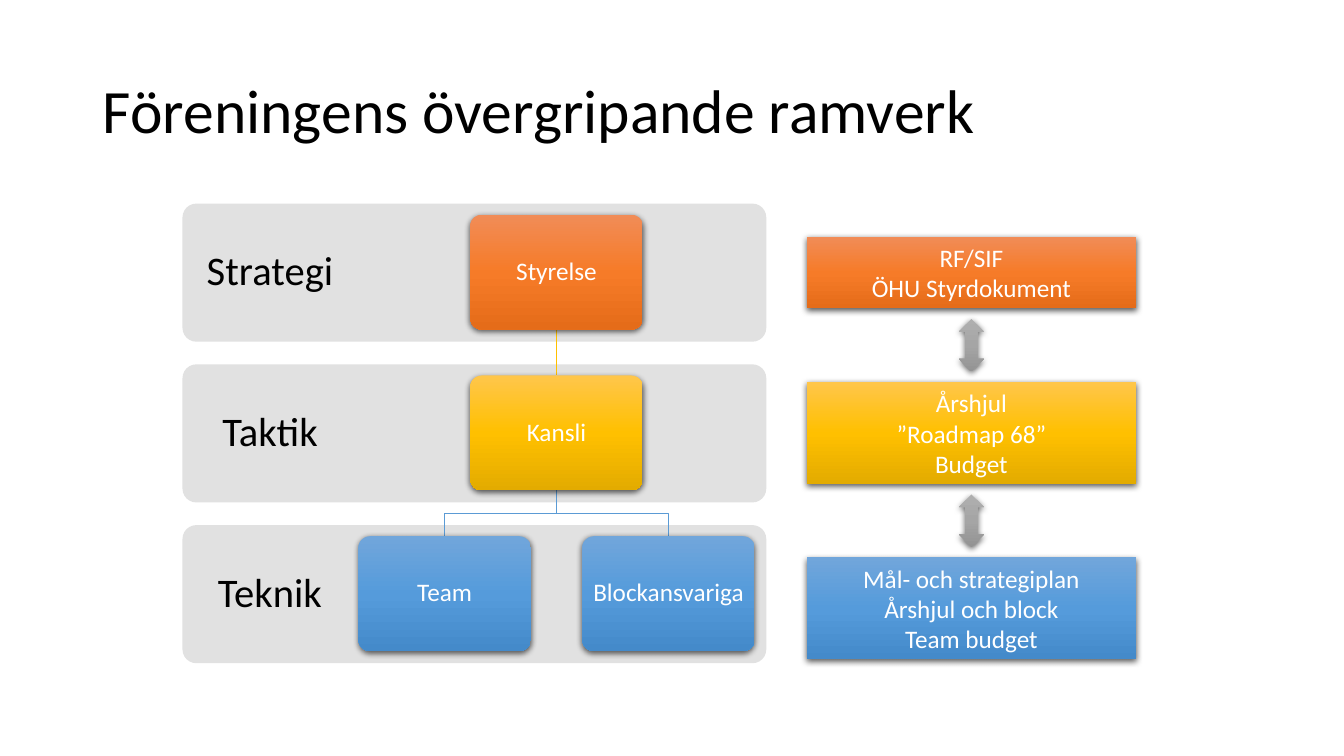
from dataclasses import dataclass
from lxml import etree
from pptx import Presentation
from pptx import util as u
from pptx.dml.color import RGBColor
from pptx.enum import shapes, text
from pptx.oxml import ns


@dataclass(frozen=True)
class Theme:
    font: str = "Calibri"
    title_size: int = 44
    label_size: int = 29
    body_size: int = 18
    ink: str = "000000"
    white: str = "FFFFFF"
    band: str = "E1E1E1"
    yellow_line: str = "FFC000"
    blue_line: str = "5B9BD5"
    orange: tuple = ("F18C57", "F67B28", "E56C19")
    yellow: tuple = ("FFC64B", "FFC000", "E3AB00")
    blue: tuple = ("71A6DB", "559BDB", "448ACA")
    grey: tuple = ("AFAFAF", "A5A5A5", "939393")


THEME = Theme()
SHAPE = shapes.MSO_SHAPE


@dataclass(frozen=True)
class Box:
    left: float
    top: float
    width: float
    height: float

    @property
    def center(self):
        return self.left + self.width / 2

    @property
    def bottom(self):
        return self.top + self.height

    def lengths(self):
        return [u.Inches(n) for n in (self.left, self.top, self.width, self.height)]


def add_element(parent, tag, **attributes):
    return etree.SubElement(parent, ns.qn(tag), attributes)


def write(shape, lines, size, color, align=text.PP_ALIGN.CENTER, spacing=1.0, inset=None):
    frame = shape.text_frame
    frame.text = "\n".join(lines)
    frame.word_wrap = True
    frame.auto_size = text.MSO_AUTO_SIZE.NONE
    frame.vertical_anchor = text.MSO_ANCHOR.MIDDLE
    if inset is not None:
        frame.margin_left = frame.margin_right = u.Inches(inset)
        frame.margin_top = frame.margin_bottom = u.Inches(inset)
    for para in frame.paragraphs:
        para.alignment = align
        para.line_spacing = spacing
        for span in para.runs:
            span.font.name = THEME.font
            span.font.size = u.Pt(size)
            span.font.color.rgb = RGBColor.from_string(color)


def add_raised(page, kind, box, stops):
    shape = page.shapes.add_shape(kind, *box.lengths())
    shape.line.fill.background()
    shape.fill.gradient()
    shape.fill.gradient_angle = 270
    stop_list = shape._element.spPr.find(".//" + ns.qn("a:gsLst"))
    for stop in list(stop_list):
        stop_list.remove(stop)
    for position, color in zip((0, 50000, 100000), stops):
        stop = add_element(stop_list, "a:gs", pos=str(position))
        add_element(stop, "a:srgbClr", val=color)
    shape.shadow.inherit = False
    effects = shape._element.spPr.find(ns.qn("a:effectLst"))
    shadow = add_element(effects, "a:outerShdw", blurRad="57150", dist="19050",
                         dir="5400000", algn="ctr", rotWithShape="0")
    shade = add_element(shadow, "a:srgbClr", val=THEME.ink)
    add_element(shade, "a:alpha", val="63000")
    return shape


def add_title(page, box):
    title = page.shapes.title
    title.left, title.top, title.width, title.height = box.lengths()
    write(title, ["Föreningens övergripande ramverk"], THEME.title_size, THEME.ink,
          text.PP_ALIGN.LEFT, 0.9)


def add_band(page, box, label):
    band = page.shapes.add_shape(SHAPE.ROUNDED_RECTANGLE, *box.lengths())
    band.adjustments[0] = 0.1
    band.fill.solid()
    band.fill.fore_color.rgb = RGBColor.from_string(THEME.band)
    band.line.fill.background()
    band.shadow.inherit = False
    label_box = Box(box.left, box.top, box.width * 0.3, box.height)
    caption = page.shapes.add_textbox(*label_box.lengths())
    write(caption, [label], THEME.label_size, THEME.ink, spacing=0.9, inset=0.23)


def add_node(page, box, label, stops):
    node = add_raised(page, SHAPE.ROUNDED_RECTANGLE, box, stops)
    node.adjustments[0] = 0.1
    write(node, [label], THEME.body_size, THEME.white, spacing=0.9, inset=0.05)


def style_line(line, color):
    line.color.rgb = RGBColor.from_string(color)
    line.width = u.Pt(1)


def add_straight_link(page, parent, child):
    link = page.shapes.add_connector(
        shapes.MSO_CONNECTOR.STRAIGHT, u.Inches(parent.center), u.Inches(parent.bottom),
        u.Inches(child.center), u.Inches(child.top))
    style_line(link.line, THEME.yellow_line)
    add_element(link._element.spPr, "a:effectLst")


def add_branch(page, parent, child):
    middle = (parent.bottom + child.top) / 2
    points = [(parent.center, middle), (child.center, middle), (child.center, child.top)]
    builder = page.shapes.build_freeform(u.Inches(parent.center), u.Inches(parent.bottom))
    builder.add_line_segments([(u.Inches(x), u.Inches(y)) for x, y in points], close=False)
    branch = builder.convert_to_shape()
    branch.fill.background()
    style_line(branch.line, THEME.blue_line)
    branch.shadow.inherit = False


def add_hierarchy(page, box):
    band_height, pitch = 1.37, 1.595
    node_width, node_height, node_pad = 1.71, 1.14, 0.11
    trunk, spread = box.left + 3.71, 1.11
    tops = [box.top + pitch * level for level in range(3)]
    for top, label in zip(tops, ("Strategi", "Taktik", "Teknik")):
        add_band(page, Box(box.left, top, box.width, band_height), label)

    def node_box(level, shift):
        return Box(trunk + shift - node_width / 2, tops[level] + node_pad,
                   node_width, node_height)

    board, office = node_box(0, 0), node_box(1, 0)
    teams, blocks = node_box(2, -spread), node_box(2, spread)
    add_straight_link(page, board, office)
    for child in (teams, blocks):
        add_branch(page, office, child)
    add_node(page, board, "Styrelse", THEME.orange)
    add_node(page, office, "Kansli", THEME.yellow)
    add_node(page, teams, "Team", THEME.blue)
    add_node(page, blocks, "Blockansvariga", THEME.blue)


def add_documents(page, box):
    gap, arrow_width, arrow_height = 0.73, 0.25, 0.52
    documents = [
        (["RF/SIF", "ÖHU Styrdokument"], THEME.orange),
        (["Årshjul", "”Roadmap 68”", "Budget"], THEME.yellow),
        (["Mål- och strategiplan", "Årshjul och block", "Team budget"], THEME.blue),
    ]
    top = box.top
    for index, (lines, stops) in enumerate(documents):
        if index:
            arrow = Box(box.center - arrow_width / 2, top - (gap + arrow_height) / 2,
                        arrow_width, arrow_height)
            add_raised(page, SHAPE.UP_DOWN_ARROW, arrow, THEME.grey)
        height = 0.11 + 0.3 * len(lines)
        card = add_raised(page, SHAPE.RECTANGLE, Box(box.left, top, box.width, height), stops)
        write(card, lines, THEME.body_size, THEME.white)
        top += height + gap


def main():
    deck = Presentation()
    deck.slide_width, deck.slide_height = u.Inches(13.33), u.Inches(7.5)
    page = deck.slides.add_slide(deck.slide_layouts[5])
    add_title(page, Box(0.92, 0.4, 11.5, 1.45))
    add_hierarchy(page, Box(1.81, 2.02, 5.79, 4.56))
    add_documents(page, Box(8, 2.35, 3.27, 4.18))
    deck.save("out.pptx")


if __name__ == "__main__":
    main()
